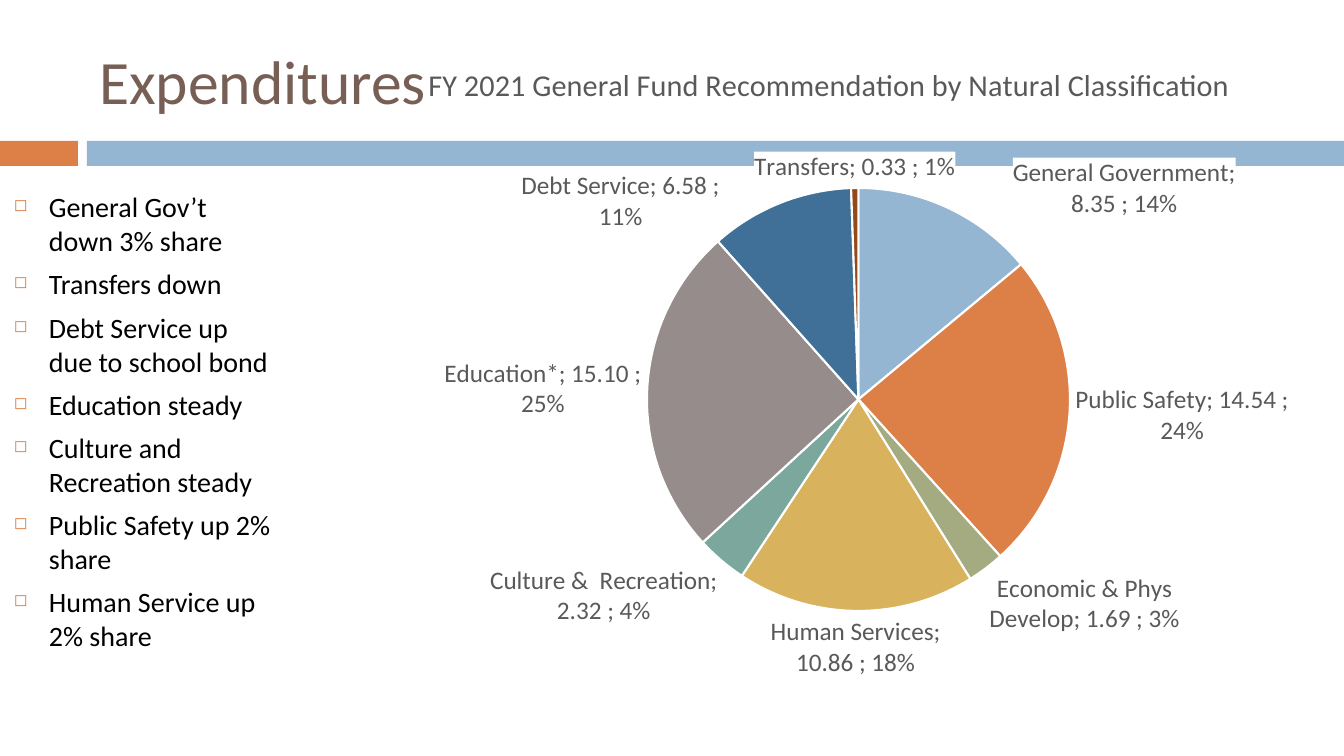
"""Build the general fund expenditures slide."""
import copy
import pptx
import pptx.chart.data
import pptx.dml.color
import pptx.enum.chart
import pptx.enum.shapes
import pptx.enum.text
import pptx.oxml
import pptx.oxml.ns
import pptx.util

FONT = "Calibri"
COLORS = {"blue": "94B6D2", "orange": "DD8047", "title": "775F55",
          "label": "595959", "text": "000000", "white": "FFFFFF"}
TITLE = "Expenditures"
CHART_TITLE = "FY 2021 General Fund Recommendation by Natural Classification"
NOTES = ["General Gov’t down 3% share", "Transfers down",
         "Debt Service up due to school bond", "Education steady",
         "Culture and Recreation steady", "Public Safety up 2% share",
         "Human Service up 2% share"]
FUNDS = [("General Government", 8.35, "94B6D2"),
         ("Public Safety", 14.54, "DD8047"),
         ("Economic & Phys Develop", 1.69, "A5AB81"),
         ("Human Services", 10.86, "D8B25C"),
         ("Culture &  Recreation", 2.32, "7BA79D"),
         ("Education*", 15.1, "968C8C"),
         ("Debt Service", 6.58, "407097"),
         ("Transfers", 0.33, "94491B")]
NUMBER_FORMAT = r"#,##0.00_);\(#,##0.00\)"
LABEL_SHIFTS = {0: (62, 16), 6: (-58, 34)}
BARS = [((0, 141, 78, 25), "orange"), ((87, 141, 1257, 25), "blue")]
CHART_BOX = (251, 42, 1165, 651)
PIE_BOX = (647, 188, 423, 423)
CHART_TITLE_AT = (423, 58)
PX = 914400 / 100.8


def px(*lengths):
    return [pptx.util.Emu(round(n * PX)) for n in lengths]


def rgb(value):
    return pptx.dml.color.RGBColor.from_string(value)


def style(font, size, color):
    font.name, font.size, font.bold = FONT, pptx.util.Pt(size), False
    font.color.rgb = rgb(COLORS[color])


def add_run(p, text, size, color):
    r = p.add_run()
    r.text = text
    style(r.font, size, color)


def xml(tag, inner=""):
    return pptx.oxml.parse_xml(
        f'<{tag} {pptx.oxml.ns.nsdecls("a", "c")}>{inner}</{tag}>')


def layout(lengths, prefix=""):
    sizes = CHART_BOX[2:] * 2
    parts = "".join(f'<c:{key} val="{n / size:.4f}"/>'
                    for key, n, size in zip("xywh", lengths, sizes))
    return xml("c:layout", f"<c:manualLayout>{prefix}{parts}</c:manualLayout>")


def place(parent, box, before, prefix=""):
    for old in parent.findall(pptx.oxml.ns.qn("c:layout")):
        parent.remove(old)
    left, top = CHART_BOX[:2]
    edges = '<c:xMode val="edge"/><c:yMode val="edge"/>'
    new = layout((box[0] - left, box[1] - top, *box[2:]), prefix + edges)
    parent.find(pptx.oxml.ns.qn(before)).addprevious(new)


def add_bars(s):
    for box, color in BARS:
        sp = s.shapes.add_shape(pptx.enum.shapes.MSO_SHAPE.RECTANGLE, *px(*box))
        sp.shadow.inherit = False
        sp.fill.solid()
        sp.fill.fore_color.rgb = rgb(COLORS[color])
        sp.line.fill.background()


def add_title(s):
    sp = s.shapes.title
    sp.left, sp.top, sp.width, sp.height = px(89, 25, 1199, 109)
    tf = sp.text_frame
    tf.vertical_anchor = pptx.enum.text.MSO_ANCHOR.MIDDLE
    p = tf.paragraphs[0]
    p.alignment = pptx.enum.text.PP_ALIGN.LEFT
    add_run(p, TITLE, 44, "title")


def add_chart(s):
    data = pptx.chart.data.CategoryChartData(number_format=NUMBER_FORMAT)
    data.categories = [name for name, _, _ in FUNDS]
    data.add_series("Series 1", [value for _, value, _ in FUNDS])
    chart = s.shapes.add_chart(pptx.enum.chart.XL_CHART_TYPE.PIE,
                               *px(*CHART_BOX), data).chart
    style(chart.font, 18, "text")
    chart.has_legend = False

    title = chart.chart_title
    add_run(title.text_frame.paragraphs[0], CHART_TITLE, 21.6, "label")
    place(title._element, CHART_TITLE_AT, "c:overlay")
    place(chart._chartSpace.chart.plotArea, PIE_BOX, "c:pieChart",
          '<c:layoutTarget val="inner"/>')

    plot = chart.plots[0]
    plot.vary_by_categories = True
    series = plot.series[0]
    for i, (_, _, color) in enumerate(FUNDS):
        fmt = series.points[i].format
        fmt.fill.solid()
        fmt.fill.fore_color.rgb = rgb(color)
        fmt.line.color.rgb = rgb(COLORS["white"])
        fmt.line.width = pptx.util.Pt(1.5)
    add_labels(series.data_labels)


def add_labels(labels):
    labels.show_value = labels.show_percentage = labels.show_category_name = True
    labels.number_format = NUMBER_FORMAT
    labels.number_format_is_linked = True
    labels.position = pptx.enum.chart.XL_LABEL_POSITION.OUTSIDE_END
    style(labels.font, 18, "label")
    root = labels._element
    root.find(pptx.oxml.ns.qn("c:txPr")).addprevious(xml(
        "c:spPr", f'<a:solidFill><a:srgbClr val="{COLORS["white"]}"/></a:solidFill>'))
    for old in root.findall(pptx.oxml.ns.qn("c:showLeaderLines")):
        root.remove(old)
    shared = list(root)
    leader = xml("c:showLeaderLines")
    leader.set("val", "0")
    root.append(leader)
    for n, (i, offset) in enumerate(LABEL_SHIFTS.items()):
        label = xml("c:dLbl", f'<c:idx val="{i}"/>')
        label.append(layout(offset))
        label.extend([copy.deepcopy(el) for el in shared])
        root.insert(n, label)


def add_notes(s):
    tf = s.shapes.add_textbox(*px(4, 185, 279, 571)).text_frame
    tf.word_wrap = True
    indent = px(35)[0]
    for i, note in enumerate(NOTES):
        p = tf.add_paragraph() if i else tf.paragraphs[0]
        p.space_before = pptx.util.Pt(7)
        add_run(p, note, 20, "text")
        pPr = p._p.get_or_add_pPr()
        pPr.set("marL", str(indent))
        pPr.set("indent", str(-indent))
        pPr.append(xml("a:buClr", f'<a:srgbClr val="{COLORS["orange"]}"/>'))
        for tag, key, value in (("a:buSzPct", "val", "60000"),
                                ("a:buChar", "char", "◻")):
            el = xml(tag)
            el.set(key, value)
            pPr.append(el)


def main():
    prs = pptx.Presentation()
    prs.slide_width, prs.slide_height = px(1344, 756)
    s = prs.slides.add_slide(prs.slide_layouts[5])
    add_bars(s)
    add_title(s)
    add_chart(s)
    add_notes(s)
    prs.save("out.pptx")


if __name__ == "__main__":
    main()
